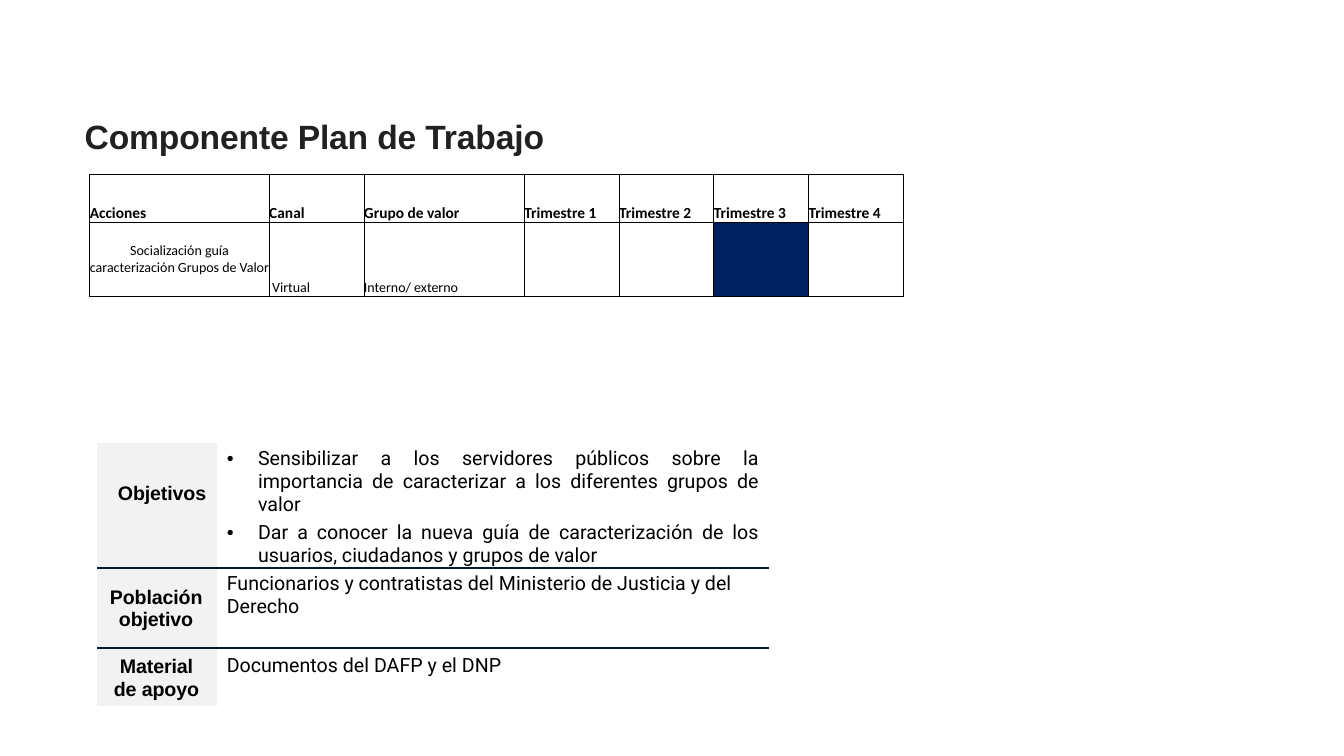
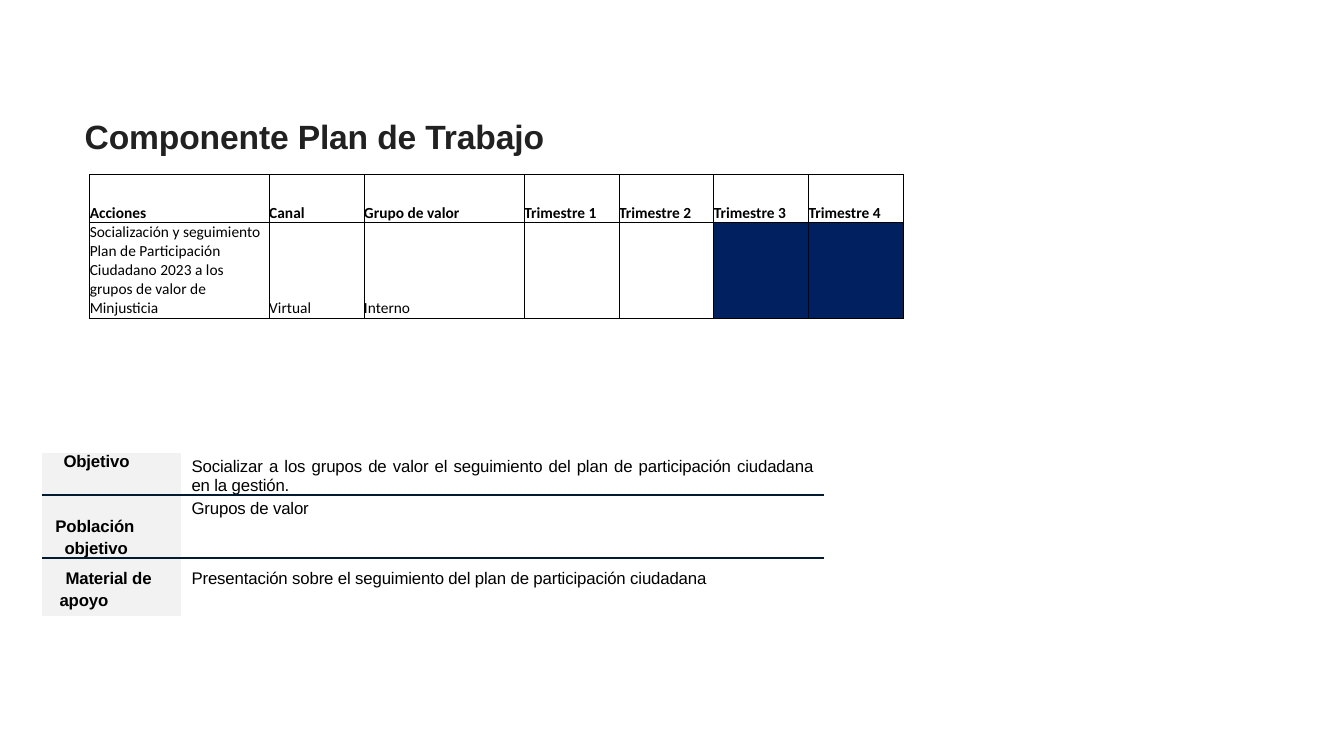
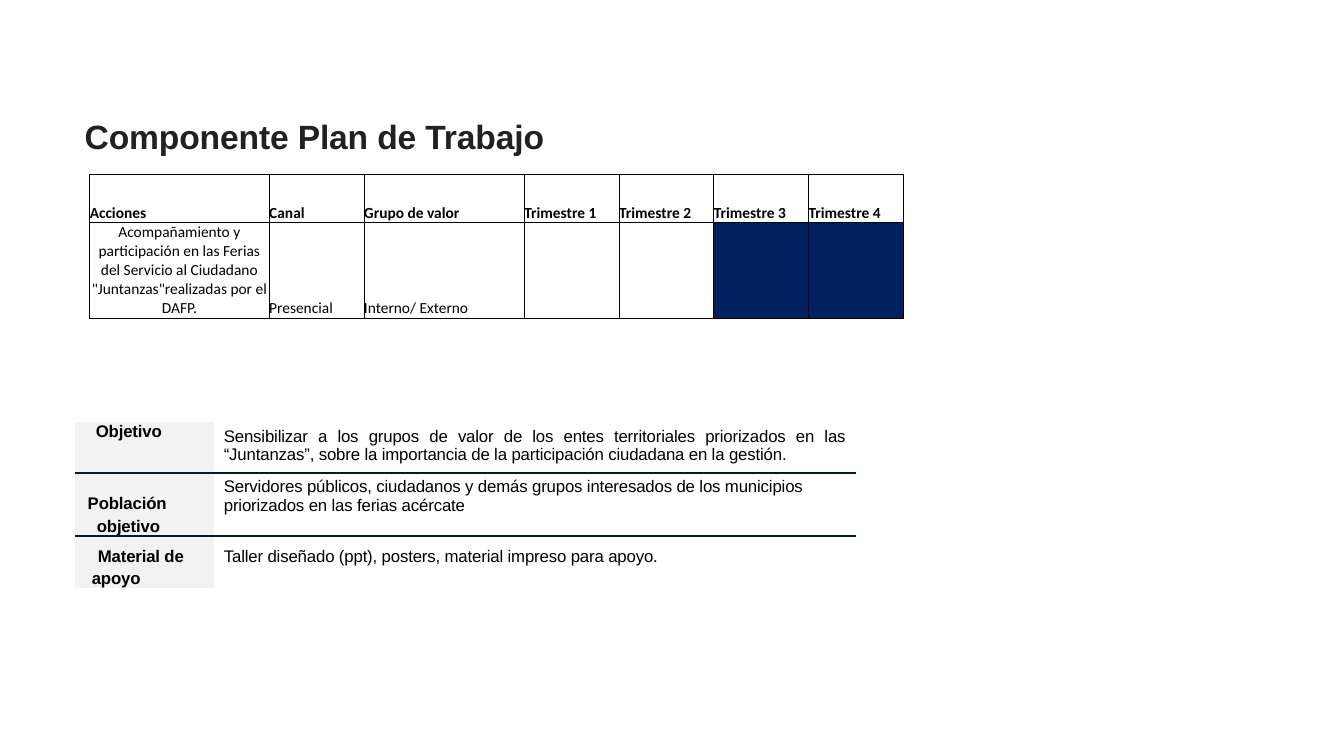
from pptx import Presentation
from pptx.dml.color import RGBColor
from pptx.enum.text import MSO_ANCHOR as ANCHOR, MSO_AUTO_SIZE as AUTO, PP_ALIGN as ALIGN
from pptx.oxml.ns import qn
from pptx.util import Inches, Pt
from lxml.etree import SubElement, Element

COLORS = {"title": "212121", "text": "000000", "active": "002060", "empty": "FFFFFF",
          "label": "F2F2F2", "rule": "031B31"}
NO_STYLE = "{2D5ABB26-0587-4C30-8999-92F81FD0307C}"
HEADERS = ["Acciones", "Canal", "Grupo de valor"] + [f"Trimestre {n}" for n in range(1, 5)]
PLAN_COLS = [1.78, 0.94, 1.59] + [0.94] * 4
EXACT = Pt(16.1)
# Left margin, first-line indent, top inset and line spacing of each label
LABEL_FORMATS = [(0.21, 0, 0, None), (0.22, -0.09, 0.18, EXACT), (0.17, 0.06, 0.07, EXACT)]
# Top inset and line spacing of each value
VALUE_FORMATS = [(0.05, 0.99), (0.05, 0.99), (0.07, EXACT)]


def rgb(name):
    return RGBColor.from_string(COLORS[name])


class Deck:
    def __init__(self):
        self.prs = Presentation()
        self.prs.slide_width, self.prs.slide_height = Inches(13.33), Inches(7.5)
        self.s = None

    def slide(self, title):
        self.s = self.prs.slides.add_slide(self.prs.slide_layouts[5])
        sp = self.s.shapes.title
        sp.left, sp.top, sp.width, sp.height = map(Inches, (0.74, 1.1, 10.45, 0.91))
        tf = sp.text_frame
        tf.auto_size, tf.vertical_anchor, tf.word_wrap = AUTO.NONE, ANCHOR.TOP, True
        self.text(tf.paragraphs[0], title, size=24, font="Arial", bold=True,
                  color="title", spacing=-10)

    def text(self, p, text, size, font, bold=False, color="text", spacing=0,
             align=ALIGN.LEFT, line=None, indent=(0, 0), bullet=None):
        """Fill a paragraph; spacing is between letters, in hundredths of a point."""
        pPr = p._p.get_or_add_pPr()
        for key, value in zip(("marL", "indent"), indent):
            pPr.set(key, str(Inches(value)))
        if bullet:
            SubElement(pPr, qn("a:buFont")).set("typeface", "Arial")
            SubElement(pPr, qn("a:buChar")).set("char", bullet)
        p.alignment, p.line_spacing = align, line
        r = p.add_run()
        r.text = text
        for key, value in {"size": Pt(size), "name": font, "bold": bold}.items():
            setattr(r.font, key, value)
        r.font.color.rgb = rgb(color)
        if spacing:
            r._r.get_or_add_rPr().set("spc", str(spacing))

    def table(self, left, top, cols, rows):
        frame = self.s.shapes.add_table(len(rows), len(cols), Inches(left), Inches(top),
                                        Inches(sum(cols)), Inches(sum(rows)))
        table = frame.table
        table.first_row = table.horz_banding = False
        table._tbl.tblPr.find(qn("a:tableStyleId")).text = NO_STYLE
        for col, width in zip(table.columns, cols):
            col.width = Inches(width)
        for row, height in zip(table.rows, rows):
            row.height = Inches(height)
        return table

    def cell(self, cell, fill=None, anchor=ANCHOR.TOP, insets=(0, 0, 0, 0),
             sides="", color="text", width=0.5):
        """Format a cell; insets run left, top, right, bottom and sides is drawn from LRTB."""
        for side, inset in zip(("left", "top", "right", "bottom"), insets):
            setattr(cell, f"margin_{side}", Inches(inset))
        cell.vertical_anchor = anchor
        if fill:
            cell.fill.solid()
            cell.fill.fore_color.rgb = rgb(fill)
        else:
            cell.fill.background()
        tcPr = cell._tc.get_or_add_tcPr()
        for i, side in enumerate(sides):
            ln = Element(qn(f"a:ln{side}"), w=str(Pt(width)))
            solid = SubElement(ln, qn("a:solidFill"))
            SubElement(solid, qn("a:srgbClr")).set("val", COLORS[color])
            tcPr.insert(i, ln)
        return cell.text_frame.paragraphs[0]

    def plan(self, entries, quarters, size=11, centered=True, channel_inset=0):
        """Add the schedule: a header row and one action with its active quarters."""
        table = self.table(0.89, 1.73, PLAN_COLS, [0.48, 0.73])
        for c, header in enumerate(HEADERS):
            p = self.cell(table.cell(0, c), anchor=ANCHOR.BOTTOM, sides="LRTB")
            self.text(p, header, 11, "Calibri", bold=True)
            middle = centered and c == 0
            fill = None
            if c > 2:
                fill = "active" if c - 2 in quarters else "empty"
            p = self.cell(table.cell(1, c), fill, ANCHOR.MIDDLE if middle else ANCHOR.BOTTOM,
                          (channel_inset if c == 1 else 0, 0, 0, 0), "LRTB")
            if c < len(entries):
                self.text(p, entries[c], size, "Calibri",
                          align=ALIGN.CENTER if middle else ALIGN.LEFT)

    def details(self, left, top, cols, rows, entries, size=12, font="Arial",
                spacing=-10, first_top=0):
        """Add the label and value table; a list as value becomes bullets."""
        table = self.table(left, top, cols, rows)
        last = len(rows) - 1
        for i, (label, value) in enumerate(entries):
            sides = ("T" if i else "") + ("B" if i < last else "")
            rule = {"sides": sides, "color": "rule", "width": 1.5}
            margin, indent, inset, line = LABEL_FORMATS[i]
            p = self.cell(table.cell(i, 0), "label",
                          insets=(0, inset if i else first_top, 0, 0), **rule)
            self.text(p, label, size, "Arial", bold=True, spacing=-10, line=line,
                      indent=(margin, indent))
            inset, line = VALUE_FORMATS[i]
            cell = table.cell(i, 1)
            p = self.cell(cell, insets=(0, inset, 0.1, 0), **rule)
            bullets = isinstance(value, list)
            for n, item in enumerate(value if bullets else [value]):
                if n:
                    p = cell.text_frame.add_paragraph()
                    p.space_before = Pt(3.8)
                self.text(p, item, size, font, spacing=spacing, line=line,
                          align=ALIGN.LEFT if i else ALIGN.JUSTIFY,
                          indent=(0.41, -0.31) if bullets else (0.1, 0),
                          bullet="•" if bullets else None)


def main():
    deck = Deck()
    title = "Componente Plan de Trabajo"
    population, material = "Población objetivo", "Material de apoyo"

    deck.slide(title)
    deck.plan(["Socialización guía caracterización Grupos de Valor", "Virtual",
               "Interno/ externo"], {3}, size=10, channel_inset=0.03)
    deck.details(0.96, 4.39, [1.19, 5.48], [1.03, 0.8, 0.57], [
        ("Objetivos", [
            "Sensibilizar a los servidores públicos sobre la importancia de caracterizar "
            "a los diferentes grupos de valor",
            "Dar a conocer la nueva guía de caracterización de los usuarios, ciudadanos "
            "y grupos de valor"]),
        (population, "Funcionarios y contratistas del Ministerio de Justicia y del Derecho"),
        (material, "Documentos del DAFP y el DNP"),
    ], size=14, font="Roboto", spacing=0, first_top=0.4)

    deck.slide(title)
    deck.plan(["Socialización y seguimiento Plan de Participación Ciudadano 2023 a los "
               "grupos de valor de Minjusticia", "Virtual", "Interno"], {3, 4}, centered=False)
    deck.details(0.42, 4.49, [1.38, 6.37], [0.39, 0.56, 0.57], [
        ("Objetivo", "Socializar a los grupos de valor el seguimiento del plan de "
                     "participación ciudadana en la gestión."),
        (population, "Grupos de valor"),
        (material, "Presentación sobre el seguimiento del plan de participación ciudadana"),
    ])

    deck.slide(title)
    deck.plan(["Acompañamiento y participación en las Ferias del Servicio al Ciudadano "
               "\"Juntanzas\"realizadas por el DAFP.", "Presencial", "Interno/ Externo"], {3, 4})
    deck.details(0.74, 4.19, [1.38, 6.37], [0.5, 0.51, 0.5], [
        ("Objetivo", "Sensibilizar a los grupos de valor de los entes territoriales "
                     "priorizados en las “Juntanzas”, sobre la importancia de la "
                     "participación ciudadana en la gestión."),
        (population, "Servidores públicos, ciudadanos y demás grupos interesados de los "
                     "municipios priorizados en las ferias acércate"),
        (material, "Taller diseñado (ppt), posters, material impreso para apoyo."),
    ])
    deck.prs.save("out.pptx")


if __name__ == "__main__":
    main()
